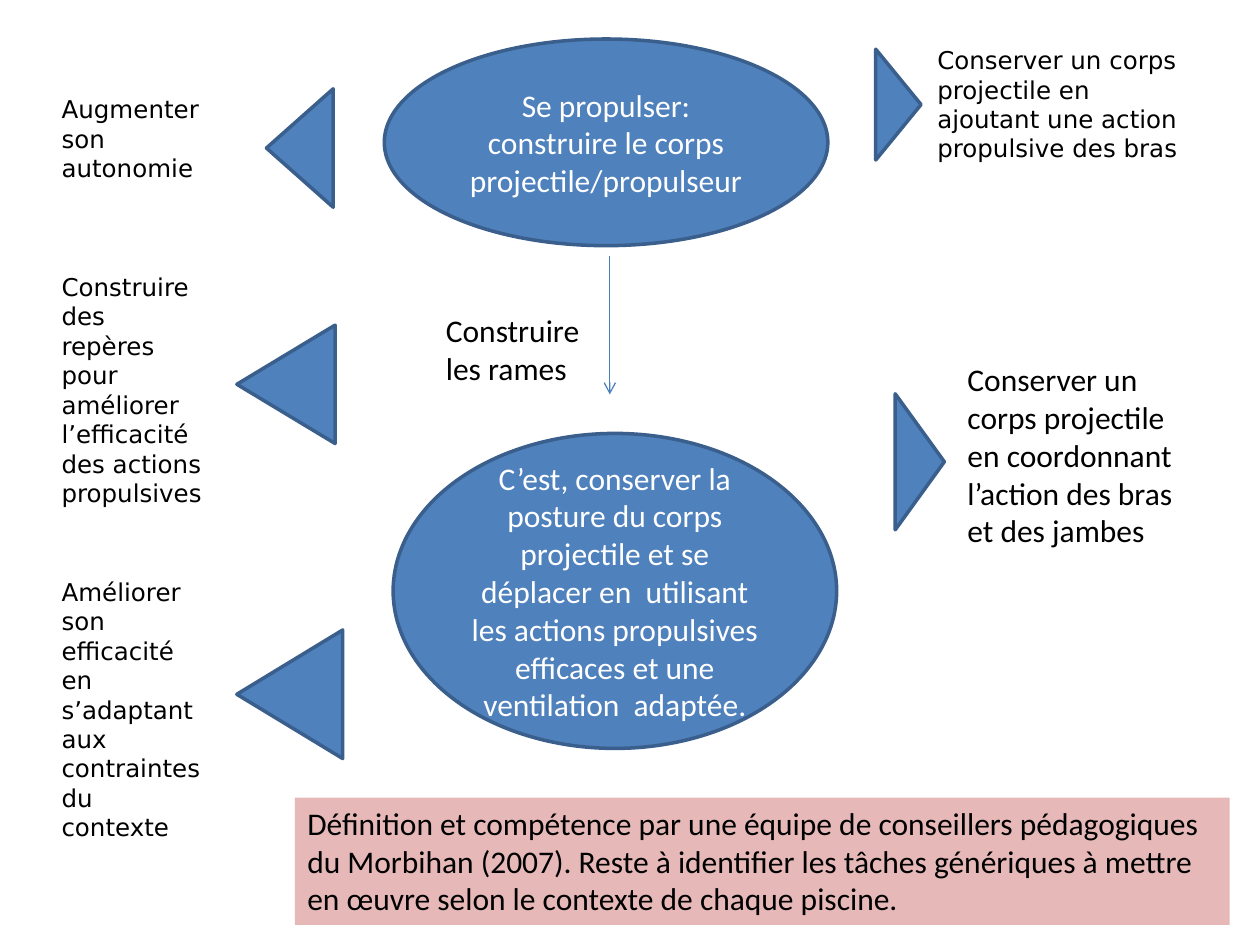
from pptx import Presentation
from pptx import util as u
from pptx.dml import color
from pptx.enum import shapes, text
from pptx.oxml import ns
from lxml import etree

BLUE, EDGE, ARROW = "4F81BD", "3A5F8C", "4B7EBC"
PINK, BLACK, WHITE = "E6B9B8", "000000", "FFFFFF"
BODY, SIDE = ("Calibri", 18), ("DejaVu Sans", 14)
LEFT, RIGHT = 270, 90


def rgb(value):
    return color.RGBColor.from_string(value)


class Diagram:
    """Holds the style and the current slide."""

    def __init__(self, slide):
        self.slide = slide

    def set_words(self, shape, words, font=BODY, ink=BLACK,
                  align=text.PP_ALIGN.LEFT, anchor=text.MSO_ANCHOR.TOP):
        frame = shape.text_frame
        frame.word_wrap = True
        frame.vertical_anchor = anchor
        frame.text = words
        for para in frame.paragraphs:
            para.alignment = align
            for span in para.runs:
                span.font.name, span.font.size = font[0], u.Pt(font[1])
                span.font.color.rgb = rgb(ink)

    def preset(self, kind, place, fill=BLUE, edge=EDGE):
        shape = self.slide.shapes.add_shape(kind, *map(u.Inches, place))
        shape.shadow.inherit = False
        shape.fill.solid()
        shape.fill.fore_color.rgb = rgb(fill)
        if edge:
            shape.line.color.rgb = rgb(edge)
            shape.line.width = u.Pt(2)
        else:
            shape.line.fill.background()
        return shape

    def ellipse(self, place, words):
        shape = self.preset(shapes.MSO_SHAPE.OVAL, place)
        self.set_words(shape, words, ink=WHITE, align=text.PP_ALIGN.CENTER,
                       anchor=text.MSO_ANCHOR.MIDDLE)

    def pointer(self, place, turn):
        shape = self.preset(shapes.MSO_SHAPE.ISOSCELES_TRIANGLE, place)
        shape.rotation = turn

    def label(self, place, words, font=BODY):
        box = self.slide.shapes.add_textbox(*map(u.Inches, place))
        self.set_words(box, words, font)

    def banner(self, place, words):
        shape = self.preset(shapes.MSO_SHAPE.RECTANGLE, place, PINK, None)
        self.set_words(shape, words)

    def arrow(self, *ends):
        line = self.slide.shapes.add_connector(
            shapes.MSO_CONNECTOR.STRAIGHT, *map(u.Inches, ends))
        line.line.color.rgb = rgb(ARROW)
        line.line.width = u.Pt(0.75)
        props = line.element.spPr
        etree.SubElement(props.find(ns.qn("a:ln")), ns.qn("a:tailEnd"), type="arrow")
        etree.SubElement(props, ns.qn("a:effectLst"))


def main():
    deck = Presentation()
    deck.slide_width, deck.slide_height = u.Inches(10), u.Inches(7.5)
    diagram = Diagram(deck.slides.add_slide(deck.slide_layouts[6]))

    # Central definitions, joined by an arrow
    diagram.ellipse((3.05, 0.31, 3.52, 1.64),
                    "Se propulser: construire le corps projectile/propulseur")
    diagram.arrow(4.84, 2.03, 4.84, 3.13)
    diagram.ellipse((3.12, 3.44, 3.52, 2.5),
                    "C’est, conserver la posture du corps projectile et se "
                    "déplacer en  utilisant les actions propulsives efficaces "
                    "et une ventilation  adaptée.")

    # Side goals: pointer place, direction, label place, words, font
    goals = [
        ((6.69, 0.65, 0.88, 0.36), RIGHT, (7.34, 0.31, 2.19, 1.04),
         "Conserver un corps projectile en ajoutant une action propulsive des bras", SIDE),
        ((6.76, 3.47, 1.08, 0.39), RIGHT, (7.58, 2.81, 1.88, 1.62),
         "Conserver un corps projectile en coordonnant l’action des bras et des jambes", BODY),
        ((1.91, 0.91, 0.94, 0.53), LEFT, (0.39, 0.7, 1.41, 0.81),
         "Augmenter son autonomie", SIDE),
        ((1.8, 2.66, 0.94, 0.78), LEFT, (0.39, 2.11, 1.33, 1.99),
         "Construire des repères pour améliorer l’efficacité des actions propulsives", SIDE),
        ((1.79, 5.09, 1.02, 0.84), LEFT, (0.39, 4.53, 1.33, 2.22),
         "Améliorer son efficacité en s’adaptant aux contraintes du contexte", SIDE),
    ]
    for pointer, turn, place, words, font in goals:
        diagram.pointer(pointer, turn)
        diagram.label(place, words, font)

    # Source note and arrow caption
    diagram.banner((2.34, 6.33, 7.42, 1.01),
                   "Définition et compétence par une équipe de conseillers "
                   "pédagogiques du Morbihan (2007). Reste à identifier les tâches "
                   "génériques à mettre en œuvre selon le contexte de chaque piscine.")
    diagram.label((3.44, 2.42, 2.58, 0.71), "Construire\nles rames")

    deck.save("out.pptx")


if __name__ == "__main__":
    main()
